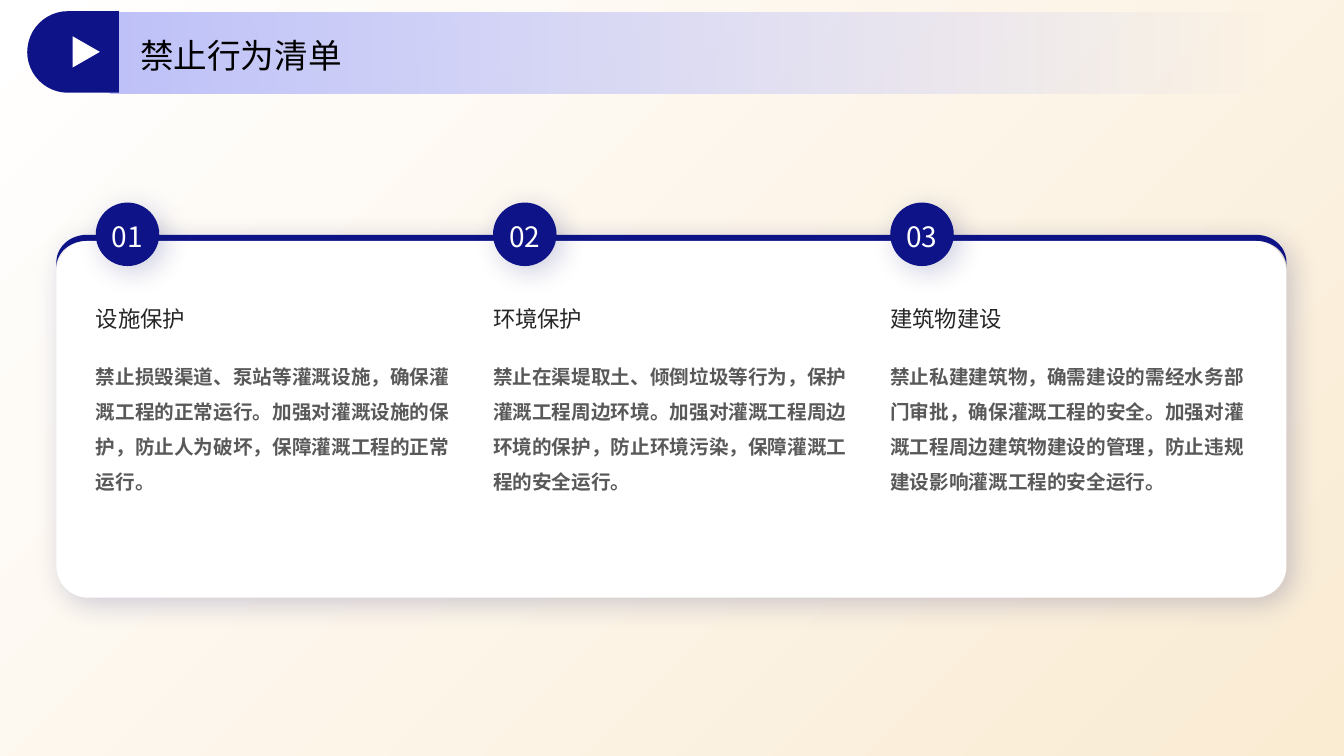
from dataclasses import dataclass
from math import cos, pi, sin

from lxml.etree import SubElement
from pptx import Presentation
from pptx.dml.color import RGBColor
from pptx.enum.shapes import MSO_SHAPE
from pptx.enum.text import MSO_ANCHOR, PP_ALIGN
from pptx.oxml.ns import qn
from pptx.util import Inches, Pt


@dataclass(frozen=True)
class Theme:
    font: str = "Noto Sans CJK SC"
    navy: str = "0E1488"
    shadow: str = "0B0F66"
    lavender: str = "BEC1F8"
    cream: str = "FAEBD3"
    white: str = "FFFFFF"
    black: str = "000000"
    heading: str = "262626"
    body: str = "595959"
    title_size: int = 24
    number_size: int = 20
    heading_size: int = 16
    body_size: int = 14


@dataclass(frozen=True)
class Box:
    left: float
    top: float
    width: float
    height: float

    def inner(self, left, top, width, height):
        return Box(self.left + left, self.top + top, width, height)

    def lengths(self):
        return [Inches(n) for n in (self.left, self.top, self.width, self.height)]


THEME = Theme()
TITLE = "禁止行为清单"
RULES = [
    ("设施保护", "禁止损毁渠道、泵站等灌溉设施，确保灌溉工程的正常运行。"
     "加强对灌溉设施的保护，防止人为破坏，保障灌溉工程的正常运行。"),
    ("环境保护", "禁止在渠堤取土、倾倒垃圾等行为，保护灌溉工程周边环境。"
     "加强对灌溉工程周边环境的保护，防止环境污染，保障灌溉工程的安全运行。"),
    ("建筑物建设", "禁止私建建筑物，确需建设的需经水务部门审批，确保灌溉工程的安全。"
     "加强对灌溉工程周边建筑物建设的管理，防止违规建设影响灌溉工程的安全运行。"),
]


def paint(shape, color):
    shape.fill.solid()
    shape.fill.fore_color.rgb = RGBColor.from_string(color)
    shape.line.fill.background()
    shape.shadow.inherit = False


def paint_gradient(shape, colors, angle):
    shape.fill.gradient()
    shape.fill.gradient_angle = angle
    for stop, color in zip(shape.fill.gradient_stops, colors):
        stop.color.rgb = RGBColor.from_string(color)
    shape.line.fill.background()
    shape.shadow.inherit = False


def cast_shadow(shape):
    effects = shape._element.spPr.find(qn("a:effectLst"))
    shadow = SubElement(effects, qn("a:outerShdw"), blurRad=str(Pt(20)),
                        dist=str(Pt(6)), dir="2700000", algn="tl", rotWithShape="0")
    color = SubElement(shadow, qn("a:srgbClr"), val=THEME.shadow)
    SubElement(color, qn("a:alpha"), val="20000")


def add_preset(page, kind, box, color, rotation=0):
    shape = page.shapes.add_shape(kind, *box.lengths())
    shape.rotation = rotation
    paint(shape, color)
    return shape


def write(shape, text, size, color, spacing, anchor=MSO_ANCHOR.MIDDLE,
          align=PP_ALIGN.LEFT, bold=False):
    frame = shape.text_frame
    frame.word_wrap = True
    frame.vertical_anchor = anchor
    frame.margin_left = frame.margin_right = frame.margin_top = frame.margin_bottom = 0
    frame.text = text
    para = frame.paragraphs[0]
    para.alignment = align
    para.line_spacing = spacing
    span = para.runs[0]
    span.font.name = THEME.font
    span.font.size = Pt(size)
    span.font.bold = bold
    span.font.color.rgb = RGBColor.from_string(color)
    SubElement(span._r.get_or_add_rPr(), qn("a:ea"), typeface=THEME.font)


def add_text(page, box, *content, **style):
    write(page.shapes.add_textbox(*box.lengths()), *content, **style)


def add_backdrop(page, box):
    backdrop = page.shapes.add_shape(MSO_SHAPE.RECTANGLE, *box.lengths())
    paint_gradient(backdrop, (THEME.white, THEME.cream), 315)


def add_header(page, box):
    band = page.shapes.add_shape(
        MSO_SHAPE.ROUNDED_RECTANGLE, *box.inner(0.68, 0, 11.6, 0.81).lengths())
    paint_gradient(band, (THEME.lavender, THEME.lavender), 0)
    last_color = list(band._element.spPr.iter(qn("a:srgbClr")))[-1]
    SubElement(last_color, qn("a:alpha"), val="0")
    add_text(page, box.inner(1.07, 0.14, 8.51, 0.54), TITLE,
             THEME.title_size, THEME.black, 1.1)
    tab = add_preset(page, MSO_SHAPE.ROUND_2_SAME_RECTANGLE,
                     box.inner(0, -0.06, 0.81, 0.91), THEME.navy, 270)
    tab.adjustments[0] = 0.5
    tab.adjustments[1] = 0
    add_preset(page, MSO_SHAPE.ISOSCELES_TRIANGLE,
               box.inner(0.38, 0.26, 0.31, 0.27), THEME.white, 90)


def arch_points(box, top, radius_x, radius_y, steps=16):
    angles = [pi / 2 * step / steps for step in range(steps + 1)]
    left_arc = [(radius_x * (1 - cos(a)), radius_y * (1 - sin(a))) for a in angles]
    right_arc = [(box.width - x, y) for x, y in reversed(left_arc)]
    return [(Inches(box.left + x), Inches(box.top + top + y))
            for x, y in left_arc + right_arc]


def add_panel(page, box):
    outer_arch = arch_points(box, 0, 0.3, 0.27)
    inner_arch = arch_points(box, 0.06, 0.3, 0.26)
    points = outer_arch + inner_arch[::-1]
    builder = page.shapes.build_freeform(*points[0])
    builder.add_line_segments(points[1:], close=True)
    edge = builder.convert_to_shape()
    paint(edge, THEME.navy)
    cast_shadow(edge)
    card = add_preset(page, MSO_SHAPE.ROUNDED_RECTANGLE,
                      box.inner(0, 0.06, box.width, box.height - 0.06), THEME.white)
    card.adjustments[0] = 0.089
    cast_shadow(card)


def add_rule(page, box, number, heading, body):
    add_text(page, box.inner(0, 1.49, box.width, 2.17), body, THEME.body_size,
             THEME.body, 1.5, anchor=MSO_ANCHOR.TOP, bold=True)
    add_text(page, box.inner(0, 0.83, box.width, 0.59), heading,
             THEME.heading_size, THEME.heading, 1.2)
    badge = add_preset(page, MSO_SHAPE.OVAL, box.inner(0, 0, 0.63, 0.63), THEME.navy)
    cast_shadow(badge)
    write(badge, f"{number:02}", THEME.number_size, THEME.white, 1.1,
          align=PP_ALIGN.CENTER)


def add_rules_page(deck, box):
    page = deck.slides.add_slide(deck.slide_layouts[6])
    add_backdrop(page, box)
    panel = box.inner(0.56, 2.33, 12.2, 3.6)
    add_panel(page, panel)
    for index, (heading, body) in enumerate(RULES):
        column = panel.inner(0.39 + 3.94 * index, -0.32, 3.54, 3.66)
        add_rule(page, column, index + 1, heading, body)
    add_header(page, box.inner(0.32, 0.12, 12.28, 0.81))


def main():
    deck = Presentation()
    page_box = Box(0, 0, 13.33, 7.5)
    deck.slide_width = Inches(page_box.width)
    deck.slide_height = Inches(page_box.height)
    add_rules_page(deck, page_box)
    deck.save("out.pptx")


if __name__ == "__main__":
    main()
